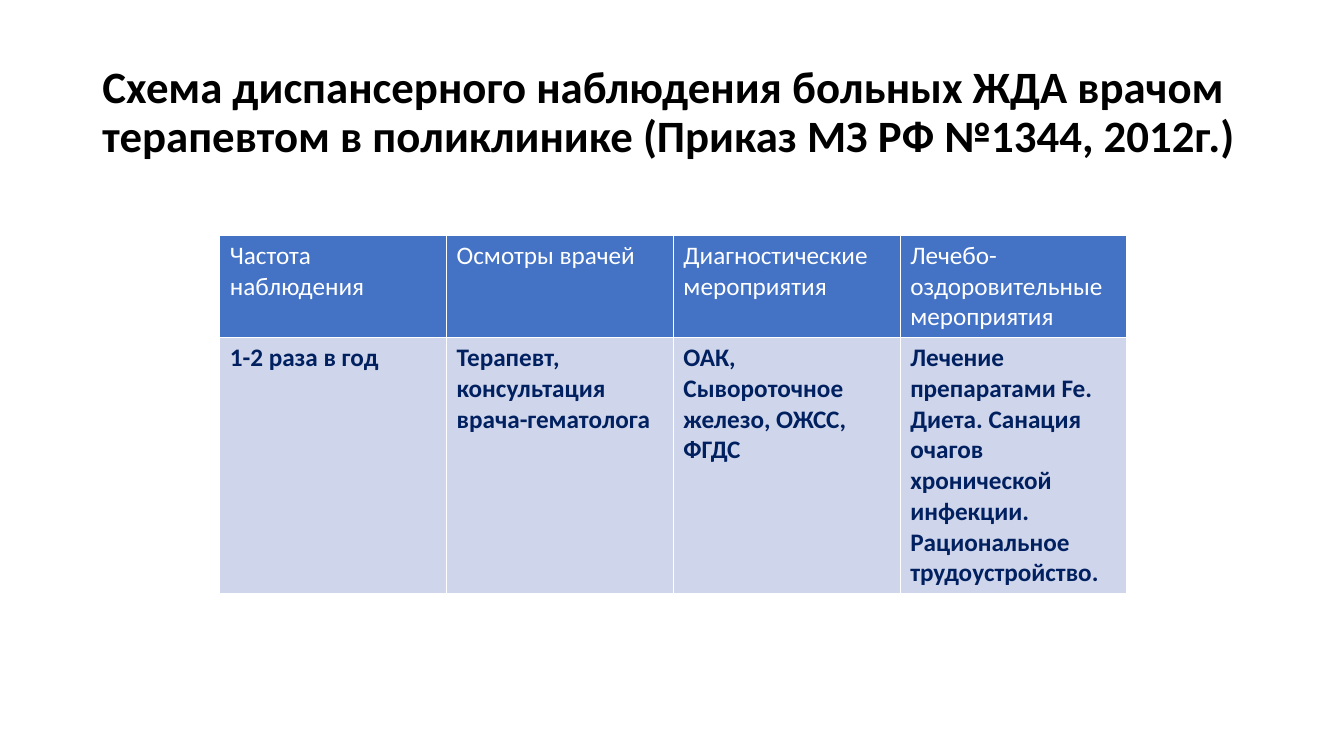
from dataclasses import dataclass

from lxml.etree import SubElement
from pptx import Presentation
from pptx.dml.color import RGBColor
from pptx.enum.text import MSO_ANCHOR, MSO_AUTO_SIZE, PP_ALIGN
from pptx.oxml.ns import qn
from pptx.slide import Slide
from pptx.table import _Cell
from pptx.text.text import _Paragraph
from pptx.util import Pt

FONT = "Calibri"
BLACK = RGBColor(0x00, 0x00, 0x00)
WHITE = RGBColor(0xFF, 0xFF, 0xFF)
BLUE = RGBColor(0x44, 0x72, 0xC4)
PALE_BLUE = RGBColor(0xCF, 0xD5, 0xEA)
NAVY = RGBColor(0x00, 0x20, 0x60)

COLUMN_WIDTH = 162
TITLE = ("Схема диспансерного наблюдения больных ЖДА врачом "
         "терапевтом в поликлинике (Приказ МЗ РФ №1344, 2012г.)")


@dataclass(frozen=True)
class ScheduleRow:
    texts: tuple[str, ...]
    height: float
    fill: RGBColor
    color: RGBColor
    bold: bool


SCHEDULE = (
    ScheduleRow(("Частота наблюдения", "Осмотры врачей",
                 "Диагностические мероприятия",
                 "Лечебо-оздоровительные мероприятия"),
                72, BLUE, WHITE, False),
    ScheduleRow(("1-2 раза в год",
                 "Терапевт, консультация врача-гематолога",
                 "ОАК, Сывороточное железо, ОЖСС, ФГДС",
                 "Лечение препаратами Fe. Диета. Санация очагов хронической "
                 "инфекции. Рациональное трудоустройство."),
                180, PALE_BLUE, NAVY, True),
)


def add_text(paragraph: _Paragraph, text: str, size: float,
             color: RGBColor, bold: bool) -> None:
    run = paragraph.add_run()
    run.text = text
    run.font.name = FONT
    run.font.size = Pt(size)
    run.font.bold = bold
    run.font.color.rgb = color


def set_borders(cell: _Cell, color: RGBColor, width: float) -> None:
    properties = cell._tc.get_or_add_tcPr()
    for position, side in enumerate(("a:lnL", "a:lnR", "a:lnT", "a:lnB")):
        line = SubElement(properties, qn(side), w=str(Pt(width)))
        fill = SubElement(line, qn("a:solidFill"))
        SubElement(fill, qn("a:srgbClr"), val=str(color))
        # Border lines come before the fill of the cell
        properties.insert(position, line)


def add_title(slide: Slide) -> None:
    title = slide.shapes.title
    title.left, title.top = Pt(66), Pt(28.8)
    title.width, title.height = Pt(828), Pt(104.4)
    frame = title.text_frame
    frame.word_wrap = True
    frame.auto_size = MSO_AUTO_SIZE.NONE
    frame.vertical_anchor = MSO_ANCHOR.MIDDLE
    paragraph = frame.paragraphs[0]
    paragraph.alignment = PP_ALIGN.LEFT
    paragraph.line_spacing = 0.9
    add_text(paragraph, TITLE, 32, BLACK, True)


def add_schedule(slide: Slide, rows: tuple[ScheduleRow, ...]) -> None:
    column_count = len(rows[0].texts)
    schedule = slide.shapes.add_table(
        len(rows), column_count, Pt(157), Pt(168),
        Pt(COLUMN_WIDTH * column_count), Pt(sum(row.height for row in rows))
    ).table
    for column in schedule.columns:
        column.width = Pt(COLUMN_WIDTH)
    for row_index, row in enumerate(rows):
        schedule.rows[row_index].height = Pt(row.height)
        for column_index, text in enumerate(row.texts):
            cell = schedule.cell(row_index, column_index)
            cell.fill.solid()
            cell.fill.fore_color.rgb = row.fill
            set_borders(cell, WHITE, 1)
            add_text(cell.text_frame.paragraphs[0], text, 18,
                     row.color, row.bold)


def main() -> None:
    presentation = Presentation()
    presentation.slide_width, presentation.slide_height = Pt(960), Pt(540)
    slide = presentation.slides.add_slide(presentation.slide_layouts[5])

    # Heading
    add_title(slide)

    # Observation schedule
    add_schedule(slide, SCHEDULE)

    presentation.save("out.pptx")


if __name__ == "__main__":
    main()
